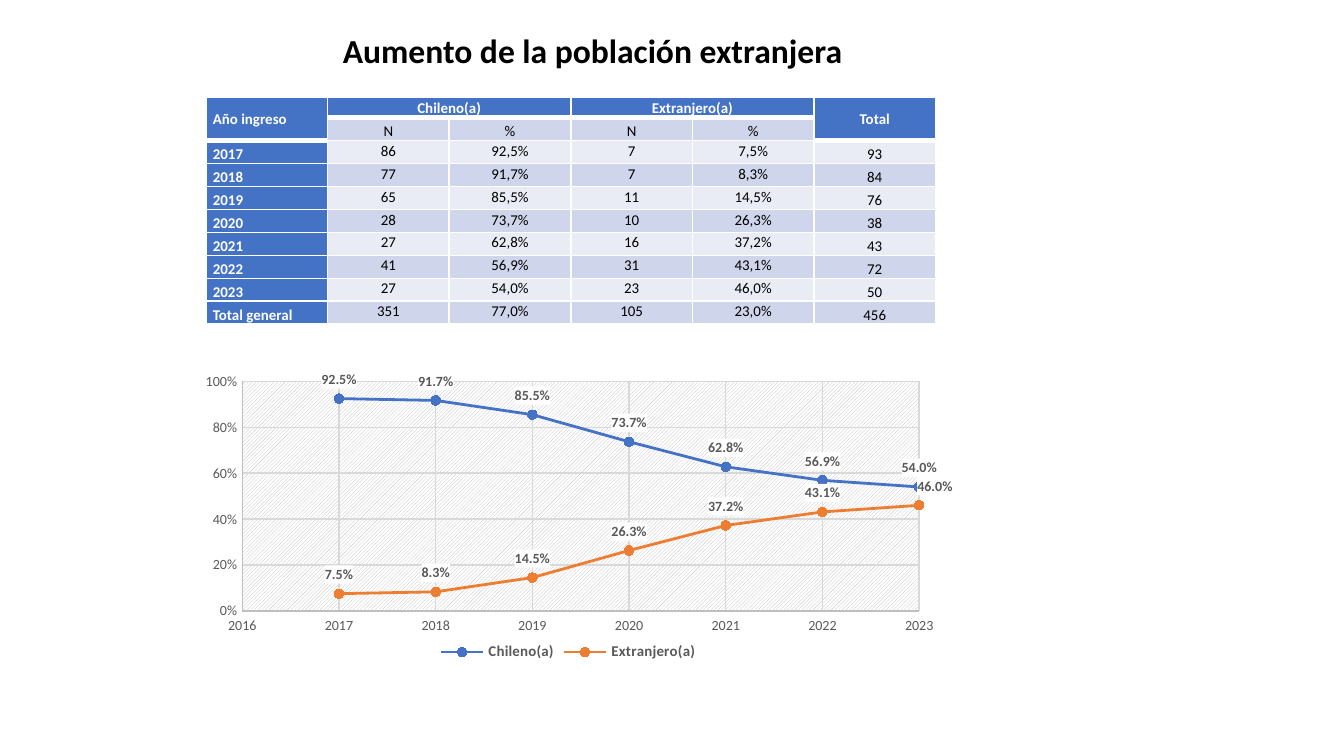
from pptx import Presentation
from pptx.chart.data import XyChartData
from pptx.dml.color import RGBColor as RGB
from pptx.enum.chart import (XL_CHART_TYPE as Kind, XL_LEGEND_POSITION as Side,
                             XL_MARKER_STYLE as Mark, XL_TICK_MARK as Tick)
from pptx.enum.text import MSO_ANCHOR as Anchor, MSO_AUTO_SIZE as Auto, PP_ALIGN as Align
from pptx.oxml import parse_xml
from pptx.oxml.ns import nsdecls, qn
from pptx.util import Inches, Pt

BLACK = RGB(0, 0, 0)
WHITE = RGB(255, 255, 255)
BLUE = RGB(0x44, 0x72, 0xC4)
ORANGE = RGB(0xED, 0x7D, 0x31)
BANDS = RGB(0xE9, 0xEB, 0xF5), RGB(0xCF, 0xD5, 0xEA)
GREY = RGB(0x59, 0x59, 0x59)
AXIS = RGB(0xBF, 0xBF, 0xBF)
GRID = RGB(0xD9, 0xD9, 0xD9)

HEADS = [["Año ingreso", "Chileno(a)", "", "Extranjero(a)", "", "Total"],
         ["", "N", "%", "N", "%", ""]]
YEARS = [["2017", "86", "92,5%", "7", "7,5%", "93"],
         ["2018", "77", "91,7%", "7", "8,3%", "84"],
         ["2019", "65", "85,5%", "11", "14,5%", "76"],
         ["2020", "28", "73,7%", "10", "26,3%", "38"],
         ["2021", "27", "62,8%", "16", "37,2%", "43"],
         ["2022", "41", "56,9%", "31", "43,1%", "72"],
         ["2023", "27", "54,0%", "23", "46,0%", "50"]]
TOTAL = ["Total general", "351", "77,0%", "105", "23,0%", "456"]


def share(text):
    return round(float(text.strip("%").replace(",", ".")) / 100, 3)


def xml(text):
    """Parse one element, declaring its namespaces."""
    tag, rest = text.split(">", 1)
    return parse_xml(f"{tag} {nsdecls('a', 'c')}>{rest}")


class Deck:
    """Slide on a grid of 100 columns; one cell is a tenth of an inch."""
    font = "Calibri"
    cell = Inches(0.1)

    def __init__(self, cols, rows):
        self.prs = Presentation()
        self.prs.slide_width, self.prs.slide_height = self.span(cols, rows)
        self.slide = self.prs.slides.add_slide(self.prs.slide_layouts[6])

    def span(self, *units):
        return [round(n * self.cell) for n in units]

    def style(self, font, size, color, bold=False):
        font.name, font.size, font.bold = self.font, Pt(size), bold
        font.color.rgb = color

    def title(self, text, *box):
        frame = self.slide.shapes.add_textbox(*self.span(*box)).text_frame
        frame.word_wrap = True
        frame.auto_size = Auto.SHAPE_TO_FIT_TEXT
        frame.text = text
        para = frame.paragraphs[0]
        para.alignment = Align.CENTER
        self.style(para.runs[0].font, 18, BLACK, True)

    def edge(self, cell, side, width):
        cell._tc.get_or_add_tcPr().append(xml(
            f'<a:ln{side} w="{Pt(width)}"><a:solidFill><a:srgbClr val="{WHITE}"/>'
            f'</a:solidFill></a:ln{side}>'))

    def table(self, rows, heights, *box):
        last = len(rows[0]) - 1
        table = self.slide.shapes.add_table(len(rows), last + 1, *self.span(*box)).table
        table.first_row = table.horz_banding = False
        for row, high in zip(table.rows, self.span(*heights)):
            row.height = high
        # Merged headings
        for top, left, low, right in ((0, 0, 1, 0), (0, 1, 0, 2), (0, 3, 0, 4),
                                      (0, last, 1, last)):
            table.cell(top, left).merge(table.cell(low, right))

        def head(r, c):
            return r == 0 or (r == 1 and c in (0, last))

        for r, row in enumerate(rows):
            for c, text in enumerate(row):
                cell = table.cell(r, c)
                dark = head(r, c) or c == 0
                cell.margin_left = cell.margin_right = Inches(0.05)
                cell.margin_top = cell.margin_bottom = 0
                if r < 2 or c in (0, last):
                    tall = r == 0 and c in (0, last)
                    cell.vertical_anchor = Anchor.MIDDLE if tall else Anchor.BOTTOM
                else:
                    cell.vertical_anchor = Anchor.TOP
                # Thick rule under headings, thin ones elsewhere
                for side in "LR":
                    self.edge(cell, side, 1)
                self.edge(cell, "T", 3 if r and head(r - 1, c) else 1)
                self.edge(cell, "B", 3 if head(r, c) else 1)
                cell.fill.solid()
                cell.fill.fore_color.rgb = BLUE if dark else BANDS[r % 2]
                if text:
                    cell.text_frame.text = text
                    para = cell.text_frame.paragraphs[0]
                    para.line_spacing = 1.07
                    para.alignment = Align.CENTER if c else Align.LEFT
                    self.style(para.runs[0].font, 8, WHITE if dark else BLACK, dark)

    def axis(self, axis, low, high, step, form):
        axis.minimum_scale, axis.maximum_scale, axis.major_unit = low, high, step
        axis.major_tick_mark = axis.minor_tick_mark = Tick.NONE
        axis.has_major_gridlines = True
        for line, color in ((axis.format.line, AXIS),
                            (axis.major_gridlines.format.line, GRID)):
            line.color.rgb, line.width = color, Pt(0.75)
        labels = axis.tick_labels
        labels.number_format, labels.number_format_is_linked = form, False
        self.style(labels.font, 7.5, GREY)

    def labels(self, series, moved):
        """Value labels on white; moved maps a point to its shift to the right."""
        look = (f'<c:numFmt formatCode="0.0%" sourceLinked="0"/><c:spPr><a:solidFill>'
                f'<a:srgbClr val="{WHITE}"/></a:solidFill></c:spPr><c:txPr><a:bodyPr/>'
                f'<a:p><a:pPr><a:defRPr sz="750" b="1"><a:solidFill><a:srgbClr val="{GREY}"/>'
                f'</a:solidFill><a:latin typeface="{self.font}"/></a:defRPr></a:pPr>'
                '<a:endParaRPr lang="es"/></a:p></c:txPr><c:dLblPos val="t"/>'
                '<c:showLegendKey val="0"/><c:showVal val="1"/><c:showCatName val="0"/>'
                '<c:showSerName val="0"/><c:showPercent val="0"/><c:showBubbleSize val="0"/>')
        own = "".join(f'<c:dLbl><c:idx val="{i}"/><c:layout><c:manualLayout><c:x val="{x}"/>'
                      f'<c:y val="0"/></c:manualLayout></c:layout>{look}</c:dLbl>'
                      for i, x in moved.items())
        series._element.find(qn("c:xVal")).addprevious(
            xml(f"<c:dLbls>{own}{look}</c:dLbls>"))

    def plot(self, chart, x, y, w, h):
        """Place the plot area and hatch it."""
        area = chart._chartSpace.chart.plotArea
        for old in area.findall(qn("c:layout")):
            area.remove(old)
        sizes = "".join(f'<c:{k} val="{v}"/>' for k, v in zip("xywh", (x, y, w, h)))
        area.insert(0, xml(
            '<c:layout><c:manualLayout><c:layoutTarget val="inner"/><c:xMode val="edge"/>'
            f'<c:yMode val="edge"/>{sizes}</c:manualLayout></c:layout>'))
        area.append(xml(
            f'<c:spPr><a:pattFill prst="ltUpDiag"><a:fgClr><a:srgbClr val="{AXIS}"/></a:fgClr>'
            f'<a:bgClr><a:srgbClr val="{WHITE}"/></a:bgClr></a:pattFill></c:spPr>'))

    def chart(self, rows, lines, *box):
        data = XyChartData(number_format="0.0%")
        for name, col, color, moved in lines:
            series = data.add_series(name)
            for row in rows:
                series.add_data_point(int(row[0]), share(row[col]))
        chart = self.slide.shapes.add_chart(
            Kind.XY_SCATTER_LINES, *self.span(*box), data).chart
        self.style(chart.font, 10, BLACK)
        chart.has_title = False
        chart.has_legend = True
        chart.legend.position = Side.BOTTOM
        chart.legend.include_in_layout = False
        self.style(chart.legend.font, 8, GREY, True)
        self.axis(chart.category_axis, 2016, 2023, 1, "General")
        self.axis(chart.value_axis, 0, 1, 0.2, "0%")
        for series, (name, col, color, moved) in zip(chart.plots[0].series, lines):
            series.smooth = False
            series.format.line.color.rgb, series.format.line.width = color, Pt(1.5)
            mark = series.marker
            mark.style, mark.size = Mark.CIRCLE, 5
            mark.format.fill.solid()
            mark.format.fill.fore_color.rgb = mark.format.line.color.rgb = color
            self.labels(series, moved)
        self.plot(chart, 0.084, 0.168, 0.864, 0.67)


deck = Deck(100, 56.25)
# Heading
deck.title("Aumento de la población extranjera", 10, 1.75, 68.2, 31)
# Intake by year
deck.table(HEADS + YEARS + [TOTAL], [1.55] + [1.71] * 9, 15.33, 7.2, 54.3, 16.9)
# Share of each group
deck.chart(YEARS, [("Chileno(a)", 2, BLUE, {}), ("Extranjero(a)", 4, ORANGE, {6: 0.02})],
           13.13, 24.1, 58.3, 25.5)
deck.prs.save("out.pptx")
